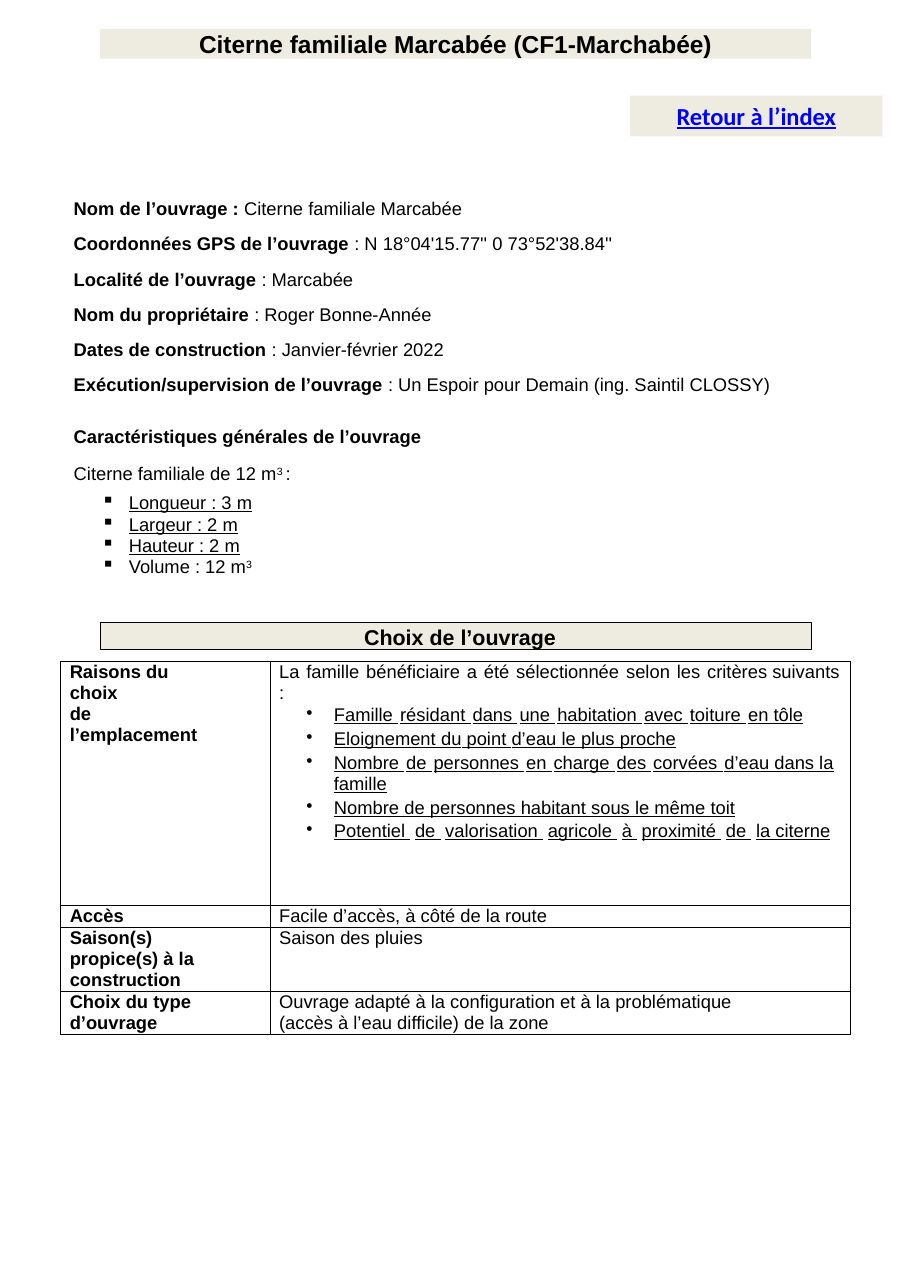
import lxml.etree
import pptx
import pptx.dml.color
import pptx.enum.shapes
import pptx.enum.text
import pptx.oxml.ns
import pptx.util

Pt = pptx.util.Pt
qn = pptx.oxml.ns.qn
CENTER = pptx.enum.text.PP_ALIGN.CENTER

COLORS = {"ink": "000000", "band": "EEECE1", "link": "0000FF"}
CELL_INDENT = 6
HANGING = 18

FACTS = [
    ("Nom de l’ouvrage : ", "Citerne familiale Marcabée"),
    ("Coordonnées GPS de l’ouvrage ", ": N 18°04'15.77'' 0 73°52'38.84''"),
    ("Localité de l’ouvrage ", ": Marcabée"),
    ("Nom du propriétaire ", ": Roger Bonne-Année"),
    ("Dates de construction ", ": Janvier-février 2022"),
    ("Exécution/supervision de l’ouvrage ",
     ": Un Espoir pour Demain (ing. Saintil CLOSSY)"),
]
DIMENSIONS = ["Longueur : 3 m", "Largeur : 2 m", "Hauteur : 2 m"]
CRITERIA = [
    ("Famille résidant dans une habitation avec toiture en", " tôle", 1.3, 0),
    ("Eloignement du point d’eau le plus proche", "", -0.2, 2.3),
    ("Nombre de personnes en charge des corvées d’eau", " dans la famille", 1.2, 2.2),
    ("Nombre de personnes habitant sous le même toit", "", -0.2, 2.3),
    ("Potentiel de valorisation agricole à proximité de la", " citerne", 3, 1.5),
]
CHOICES = [
    (14.4, ["Accès"], ["Facile d’accès, à côté de la route"]),
    (41.8, ["Saison(s) propice(s) à la construction"], ["Saison des pluies"]),
    (28, ["Choix du type", "d’ouvrage"],
     ["Ouvrage adapté à la configuration et à la problématique",
      "(accès à l’eau difficile) de la zone"]),
]


def rgb(name):
    return pptx.dml.color.RGBColor.from_string(COLORS[name])


def spread(text, spacing, style=""):
    runs = []
    for index, word in enumerate(text.split(" ")):
        if index:
            runs.append((" ", style, spacing))
        runs.append((word, style))
    return runs


def add_run(paragraph, text, style="", spacing=0, size=12, font="Arial", color="ink"):
    run = paragraph.add_run()
    run.text = text
    run.font.name = font
    run.font.size = Pt(size)
    run.font.bold = "b" in style
    run.font.underline = "u" in style
    run.font.color.rgb = rgb(color)
    properties = run.font._element
    if spacing:
        properties.set("spc", str(round(spacing * 100)))
    if "^" in style:
        properties.set("baseline", "28000")


def add_paragraph(frame, runs, before=0, line=None, left=0, bullet=None):
    paragraph = frame.paragraphs[0]
    if paragraph.runs:
        paragraph = frame.add_paragraph()
    paragraph.space_before = Pt(before)
    if line:
        paragraph.line_spacing = line
    properties = paragraph._p.get_or_add_pPr()
    properties.set("marL", str(Pt(left)))
    properties.set("indent", str(Pt(-HANGING if bullet else 0)))
    if bullet:
        lxml.etree.SubElement(properties, qn("a:buChar"), char=bullet)
    for run in runs:
        add_run(paragraph, *run)


def set_margins(holder, left=0, top=0, right=0, bottom=0):
    holder.margin_left, holder.margin_top = Pt(left), Pt(top)
    holder.margin_right, holder.margin_bottom = Pt(right), Pt(bottom)


def add_band(slide, box, text, size, style="b", font="Arial", color="ink",
             outlined=False, margins=(0, 0, 0, 0)):
    shape = slide.shapes.add_shape(
        pptx.enum.shapes.MSO_SHAPE.RECTANGLE, *map(Pt, box))
    shape.shadow.inherit = False
    shape.fill.solid()
    shape.fill.fore_color.rgb = rgb("band")
    if outlined:
        shape.line.color.rgb = rgb("ink")
        shape.line.width = Pt(0.48)
    else:
        shape.line.fill.background()
    frame = shape.text_frame
    frame.word_wrap = True
    frame.vertical_anchor = pptx.enum.text.MSO_ANCHOR.TOP
    set_margins(frame, *margins)
    frame.paragraphs[0].alignment = CENTER
    add_run(frame.paragraphs[0], text, style, 0, size, font, color)


def add_description(slide):
    box = slide.shapes.add_textbox(Pt(41), Pt(128.2), Pt(550), Pt(252.7))
    frame = box.text_frame
    frame.word_wrap = True
    set_margins(frame, top=0.9)
    for index, (label, value) in enumerate(FACTS):
        add_paragraph(frame, [(label, "b"), (value,)], 8.5 if index else 1, left=7.2)
    add_paragraph(frame, [("Caractéristiques générales de l’ouvrage", "b")],
                  19.6, left=7.2)
    add_paragraph(frame, [("Citerne familiale de 12 m",), ("3 ", "^"), (":",)],
                  9.9, left=7.2)
    volume = [("Volume : 12 m",), ("3", "^")]
    items = [[(text, "u")] for text in DIMENSIONS] + [volume]
    for index, runs in enumerate(items):
        add_paragraph(frame, runs, 0 if index else 5.4, Pt(13.9), 43.2, "▪")


def style_cell(cell, right):
    set_margins(cell, right=right)
    properties = cell._tc.get_or_add_tcPr()
    for side in ("a:lnL", "a:lnR", "a:lnT", "a:lnB"):
        border = lxml.etree.SubElement(properties, qn(side), w=str(Pt(0.5)))
        fill = lxml.etree.SubElement(border, qn("a:solidFill"))
        lxml.etree.SubElement(fill, qn("a:srgbClr"), val=COLORS["ink"])
    cell.fill.background()


def fill_cell(cell, lines, style=""):
    for text in lines:
        add_paragraph(cell.text_frame, [(text, style)], line=Pt(13.7), left=CELL_INDENT)


def add_criteria(frame):
    intro = spread("La famille bénéficiaire a été sélectionnée selon les ", 1.1)
    add_paragraph(frame, intro + [("critères suivants :",)], 0.5, Pt(13.8), CELL_INDENT)
    for text, ending, spacing, before in CRITERIA:
        runs = spread(text, spacing, "u")
        if ending:
            runs.append((ending, "u"))
        add_paragraph(frame, runs, before, Pt(14.3) if not before else None,
                      41.8, "•")


def add_choices(slide):
    heights = [159.4] + [height for height, _, _ in CHOICES]
    graphic = slide.shapes.add_table(len(heights), 2, Pt(39.6), Pt(432.2),
                                     Pt(516.2), Pt(sum(heights)))
    table = graphic.table
    table.first_row = False
    table.horz_banding = False
    table.columns[0].width, table.columns[1].width = Pt(136.8), Pt(379.4)
    for row, height in zip(table.rows, heights):
        row.height = Pt(height)
        for cell, right in zip(row.cells, (40, 6)):
            style_cell(cell, right)
    fill_cell(table.cell(0, 0), ["Raisons du choix", "de l’emplacement"], "b")
    add_criteria(table.cell(0, 1).text_frame)
    for index, (_, label, value) in enumerate(CHOICES, 1):
        fill_cell(table.cell(index, 0), label, "b")
        fill_cell(table.cell(index, 1), value)


def main():
    presentation = pptx.Presentation()
    presentation.slide_width = Pt(594.72)
    presentation.slide_height = Pt(841.68)
    slide = presentation.slides.add_slide(presentation.slide_layouts[6])
    add_band(slide, (65.5, 18.9, 464.4, 19.4),
             "Citerne familiale Marcabée (CF1-Marchabée)", 16)
    add_description(slide)
    add_band(slide, (65.5, 406.8, 464.7, 17.5), "Choix de l’ouvrage", 14,
             outlined=True, margins=(5.8, 0.9, 0, 0))
    add_choices(slide)
    add_band(slide, (411.8, 62.6, 164.9, 26.6), "Retour à l’index", 16, "bu",
             "Calibri", "link", margins=(7.2, 3.6, 7.2, 3.6))
    presentation.save("out.pptx")


if __name__ == "__main__":
    main()
